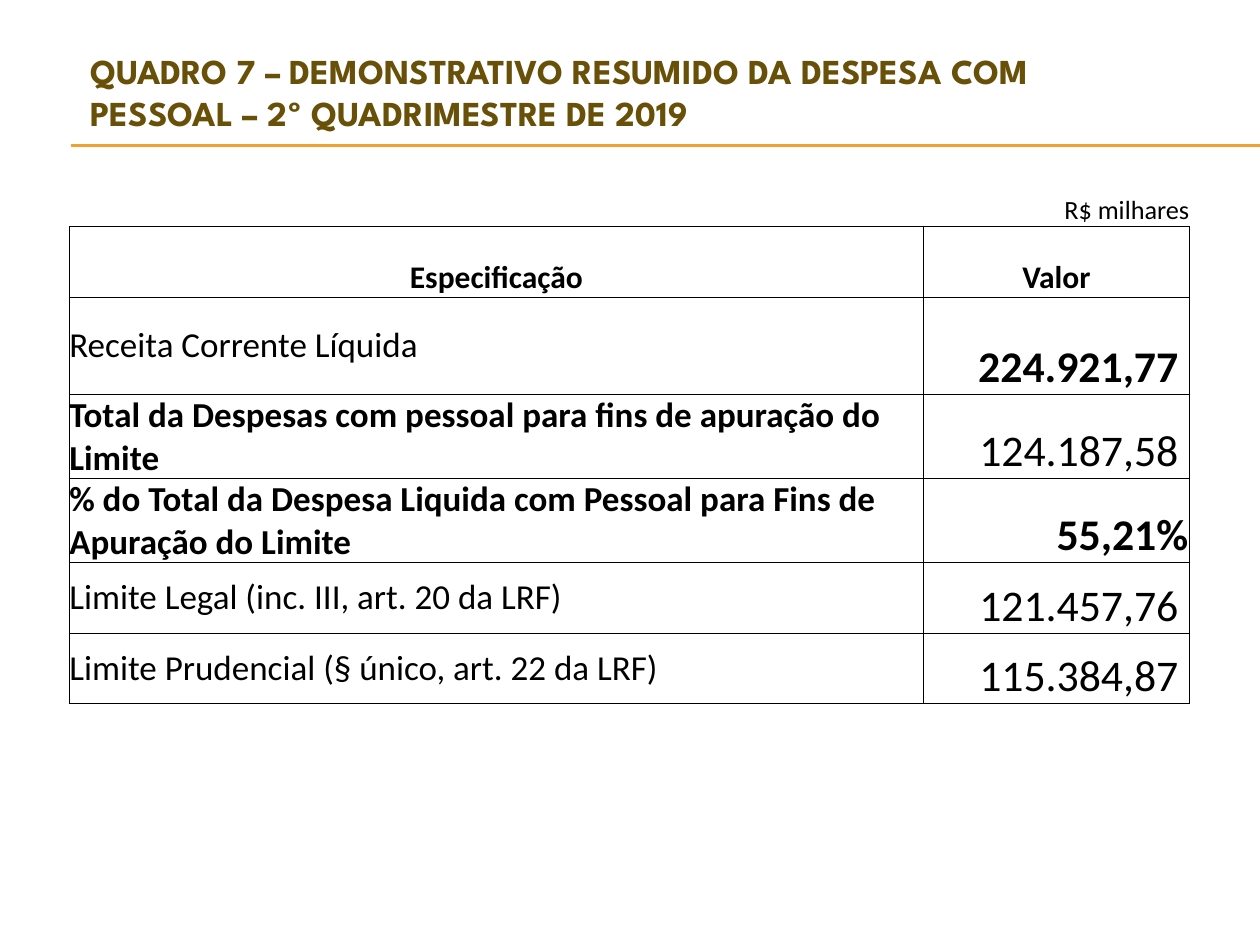
from lxml.etree import SubElement
from pptx import Presentation
from pptx.dml.color import RGBColor
from pptx.enum.shapes import MSO_CONNECTOR
from pptx.enum.text import MSO_ANCHOR, PP_ALIGN
from pptx.oxml.ns import qn
from pptx.util import Inches, Pt

COLORS = {"title": "695008", "rule": "F0A22E", "text": "000000", "border": "000000"}
NO_STYLE = "{2D5ABB26-0587-4C30-8999-92F81FD0307C}"


def add_run(p, text, size, bold, font, color):
    r = p.add_run()
    r.text = text
    r.font.size = Pt(size)
    r.font.bold = bold
    r.font.name = font
    r.font.color.rgb = RGBColor.from_string(COLORS[color])


def add_borders(cell, sides):
    tc_pr = cell._tc.get_or_add_tcPr()
    for side in sides:
        ln = SubElement(tc_pr, qn(f"a:ln{side}"), w=str(Pt(0.5)))
        fill = SubElement(ln, qn("a:solidFill"))
        SubElement(fill, qn("a:srgbClr"), val=COLORS["border"])


prs = Presentation()
prs.slide_width = Inches(10)
prs.slide_height = Inches(7.5)
s = prs.slides.add_slide(prs.slide_layouts[6])

for y in (1.15, 1.16):
    rule = s.shapes.add_connector(
        MSO_CONNECTOR.STRAIGHT, Inches(0.56), Inches(y), Inches(10), Inches(y))
    rule.line.color.rgb = RGBColor.from_string(COLORS["rule"])
    rule.line.width = Pt(0.75)
    SubElement(rule._element.spPr, qn("a:effectLst"))

title = s.shapes.add_textbox(Inches(0.62), Inches(0.39), Inches(8.5), Inches(0.67))
tf = title.text_frame
tf.word_wrap = True
tf.vertical_anchor = MSO_ANCHOR.MIDDLE
add_run(tf.paragraphs[0],
        "QUADRO 7 – DEMONSTRATIVO RESUMIDO DA DESPESA COM PESSOAL – 2º QUADRIMESTRE DE 2019",
        20, True, "League Spartan", "title")

col_widths = [2.66, 1.48, 1.48, 1.16, 2.11]
row_heights = [0.55, 0.56, 0.77, 0.56, 0.56, 0.56, 0.56]
entries = [
    ("Receita Corrente Líquida", False, "224.921,77 ", True),
    ("Total da Despesas com pessoal para fins de apuração do Limite", True, "124.187,58 ", False),
    ("% do Total da Despesa Liquida com Pessoal para Fins de Apuração do Limite", True,
     "55,21%", True),
    ("Limite Legal (inc. III, art. 20 da LRF)", False, "121.457,76 ", False),
    ("Limite Prudencial (§ único, art. 22 da LRF)", False, "115.384,87 ", False),
]

frame = s.shapes.add_table(
    len(row_heights), len(col_widths), Inches(0.55), Inches(1.25),
    Inches(sum(col_widths)), Inches(sum(row_heights)))
table = frame.table
table.first_row = False
table.horz_banding = False
table._tbl.tblPr.find(qn("a:tableStyleId")).text = NO_STYLE
for col, width in zip(table.columns, col_widths):
    col.width = Inches(width)
for row, height in zip(table.rows, row_heights):
    row.height = Inches(height)

for i, row in enumerate(table.rows):
    for cell in row.cells:
        add_borders(cell, "B" if i == 0 else "LRTB")
        cell.fill.background()
    if i > 0:
        table.cell(i, 0).merge(table.cell(i, 3))

bottom, middle = MSO_ANCHOR.BOTTOM, MSO_ANCHOR.MIDDLE
left, center, right = PP_ALIGN.LEFT, PP_ALIGN.CENTER, PP_ALIGN.RIGHT
contents = [
    (0, 4, "R$ milhares", 15, False, right, bottom, 0),
    (1, 0, "Especificação", 18, True, center, bottom, 0),
    (1, 4, "Valor", 18, True, center, bottom, 0),
]
for i, (label, label_bold, value, value_bold) in enumerate(entries, start=2):
    contents.append((i, 0, label, 20, label_bold, left, middle, 0))
    contents.append((i, 4, value, 25, value_bold, right, bottom, 0.01))

for i, j, text, size, bold, align, anchor, inset in contents:
    cell = table.cell(i, j)
    cell.margin_left = cell.margin_right = cell.margin_top = Inches(inset)
    cell.margin_bottom = 0
    cell.vertical_anchor = anchor
    p = cell.text_frame.paragraphs[0]
    p.alignment = align
    add_run(p, text, size, bold, "Calibri", "text")

prs.save("out.pptx")
